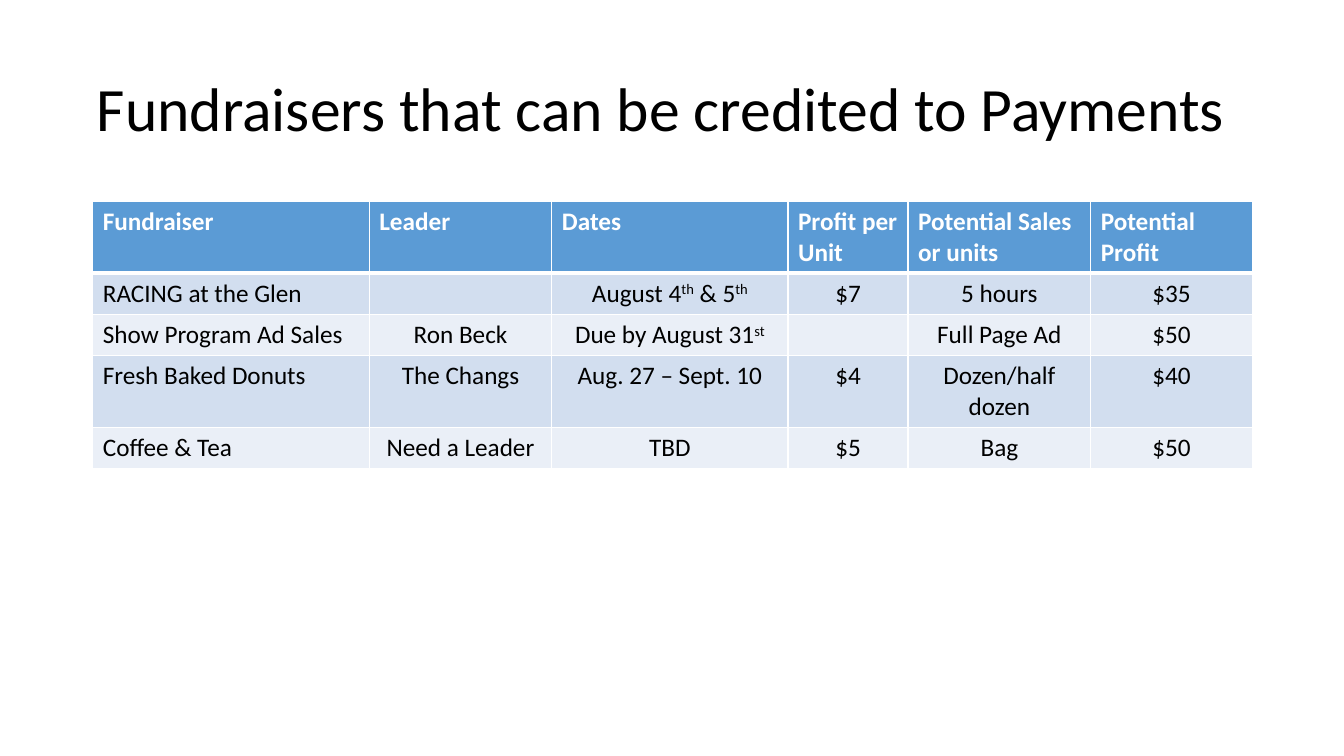
import pptx
import pptx.util
import pptx.dml.color
import pptx.enum.text
import pptx.oxml
import pptx.oxml.ns
from dataclasses import dataclass

Inches = pptx.util.Inches
ALIGN = pptx.enum.text.PP_ALIGN


@dataclass(frozen=True)
class Theme:
    font: str = "Calibri"
    title: int = 44
    body: int = 18
    ink: str = "000000"
    white: str = "FFFFFF"
    head: str = "5B9BD5"
    bands: tuple = ("D2DEEF", "EAEFF7")
    thin: int = 1
    thick: int = 3


THEME = Theme()
HEADS = ["Fundraiser", "Leader", "Dates", "Profit per Unit",
         "Potential Sales or units", "Potential Profit"]
# Text between carets is raised
ROWS = [
    ["RACING at the Glen", "", "August 4^th^ & 5^th^", "$7", "5 hours", "$35"],
    ["Show Program Ad Sales", "Ron Beck", "Due by August 31^st^", "",
     "Full Page Ad", "$50"],
    ["Fresh Baked Donuts", "The Changs", "Aug. 27 – Sept. 10", "$4",
     "Dozen/half dozen", "$40"],
    ["Coffee & Tea", "Need a Leader", "TBD", "$5", "Bag", "$50"],
]
WIDTHS = [2.74, 1.81, 2.34, 1.19, 1.81, 1.6]
ROW_H = 0.41


def color(code):
    return pptx.dml.color.RGBColor.from_string(code)


def write(frame, text, size=THEME.body, ink=THEME.ink, bold=False,
          align=ALIGN.LEFT, space=None):
    para = frame.paragraphs[0]
    para.alignment = align
    if space:
        para.line_spacing = space
    for i, part in enumerate(text.split("^")):
        if not part:
            continue
        run = para.add_run()
        run.text = part
        run.font.name = THEME.font
        run.font.size = pptx.util.Pt(size)
        run.font.bold = bold
        run.font.color.rgb = color(ink)
        if i % 2:
            run.font._element.set("baseline", "30000")


def edge(cell, top, bottom):
    props = cell._tc.get_or_add_tcPr()
    sides = {"L": THEME.thin, "R": THEME.thin, "T": top, "B": bottom}
    for side, width in sides.items():
        props.append(pptx.oxml.parse_xml(
            f'<a:ln{side} {pptx.oxml.ns.nsdecls("a")} w="{pptx.util.Pt(width)}">'
            f'<a:solidFill><a:srgbClr val="{THEME.white}"/></a:solidFill>'
            f'</a:ln{side}>'))


# Title
def add_title(slide, text, left, top, width, height):
    title = slide.shapes.title
    title.left, title.top = Inches(left), Inches(top)
    title.width, title.height = Inches(width), Inches(height)
    frame = title.text_frame
    frame.word_wrap = True
    frame.auto_size = pptx.enum.text.MSO_AUTO_SIZE.NONE
    frame.vertical_anchor = pptx.enum.text.MSO_ANCHOR.MIDDLE
    write(frame, text, size=THEME.title, space=0.9)


# Table of fundraisers
def add_grid(slide, left, top, width):
    lines = [HEADS] + ROWS
    table = slide.shapes.add_table(
        len(lines), len(HEADS), Inches(left), Inches(top),
        Inches(width), Inches(ROW_H * len(lines))).table
    for col, share in zip(table.columns, WIDTHS):
        col.width = Inches(width * share / sum(WIDTHS))
    for r, line in enumerate(lines):
        for c, text in enumerate(line):
            cell = table.cell(r, c)
            edge(cell, THEME.thick if r == 1 else THEME.thin,
                 THEME.thick if r == 0 else THEME.thin)
            cell.fill.solid()
            if r == 0:
                cell.fill.fore_color.rgb = color(THEME.head)
                write(cell.text_frame, text, ink=THEME.white, bold=True)
            else:
                cell.fill.fore_color.rgb = color(THEME.bands[(r - 1) % 2])
                write(cell.text_frame, text,
                      align=ALIGN.CENTER if c else ALIGN.LEFT)


def main():
    deck = pptx.Presentation()
    deck.slide_width, deck.slide_height = Inches(13.33), Inches(7.5)
    slide = deck.slides.add_slide(deck.slide_layouts[5])
    add_title(slide, "Fundraisers that can be credited to Payments",
              0.86, 0.51, 11.5, 1.19)
    add_grid(slide, 0.92, 2, 11.5)
    deck.save("out.pptx")


if __name__ == "__main__":
    main()
